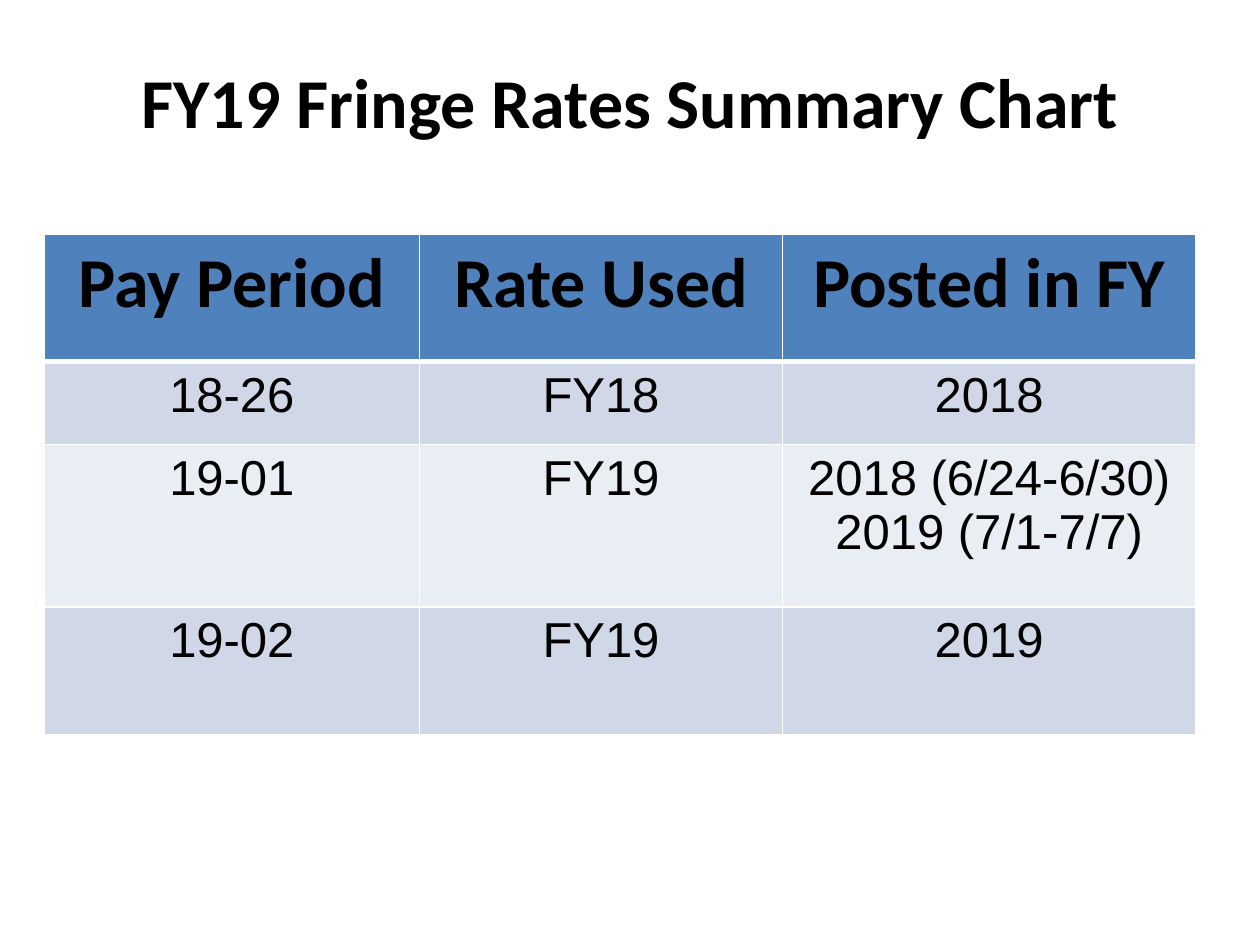
from pptx import Presentation
from pptx import util as u
from pptx.dml.color import RGBColor
from pptx.enum import text
from pptx.oxml import parse_xml
from pptx.oxml.ns import nsdecls

HEADING = "FY19 Fringe Rates Summary Chart"
RATES = [
    ("Pay Period", "Rate Used", "Posted in FY"),
    ("18-26", "FY18", "2018"),
    ("19-01", "FY19", "2018 (6/24-6/30)\n2019 (7/1-7/7)"),
    ("19-02", "FY19", "2019"),
]
COLUMNS = (2.98, 2.88, 3.28)
ROWS = (1.01, 0.66, 1.29, 1.01)
THEME = {
    "head_fill": "4F81BD",
    "bands": ("E9EDF4", "D0D8E8"),
    "rule": "FFFFFF",
    "heading": {"name": "Calibri", "size": u.Pt(40), "bold": True},
    "body": {"name": "Arial", "size": u.Pt(28), "bold": False},
    "ink": "000000",
}


def write(frame, words, style):
    frame.text = words
    for paragraph in frame.paragraphs:
        paragraph.alignment = text.PP_ALIGN.CENTER
        for key, value in style.items():
            setattr(paragraph.font, key, value)
        paragraph.font.color.rgb = RGBColor.from_string(THEME["ink"])


def rule_cell(cell, widths):
    for side, points in widths.items():
        cell._tc.get_or_add_tcPr().append(parse_xml(
            f'<a:ln{side} {nsdecls("a")} w="{u.Pt(points)}"><a:solidFill>'
            f'<a:srgbClr val="{THEME["rule"]}"/></a:solidFill></a:ln{side}>'))


def main():
    deck = Presentation()
    deck.slide_width, deck.slide_height = u.Inches(10), u.Inches(7.5)
    slide = deck.slides.add_slide(deck.slide_layouts[5])

    heading = slide.shapes.title
    place = dict(left=0.5, top=0.34, width=9, height=0.92)
    for key, value in place.items():
        setattr(heading, key, u.Inches(value))
    heading.text_frame.vertical_anchor = text.MSO_ANCHOR.MIDDLE
    write(heading.text_frame, HEADING, THEME["heading"])

    area = map(u.Inches, (0.35, 1.86, sum(COLUMNS), sum(ROWS)))
    rates = slide.shapes.add_table(len(ROWS), len(COLUMNS), *area).table
    for column, width in zip(rates.columns, COLUMNS):
        column.width = u.Inches(width)
    for row, height in zip(rates.rows, ROWS):
        row.height = u.Inches(height)

    for r, entries in enumerate(RATES):
        is_head = r == 0
        fill = THEME["head_fill"] if is_head else THEME["bands"][r % 2]
        rules = {"L": 1, "R": 1, "T": 3 if r == 1 else 1, "B": 3 if is_head else 1}
        for c, entry in enumerate(entries):
            cell = rates.cell(r, c)
            rule_cell(cell, rules)
            cell.fill.solid()
            cell.fill.fore_color.rgb = RGBColor.from_string(fill)
            write(cell.text_frame, entry, THEME["heading" if is_head else "body"])

    deck.save("out.pptx")


if __name__ == "__main__":
    main()
